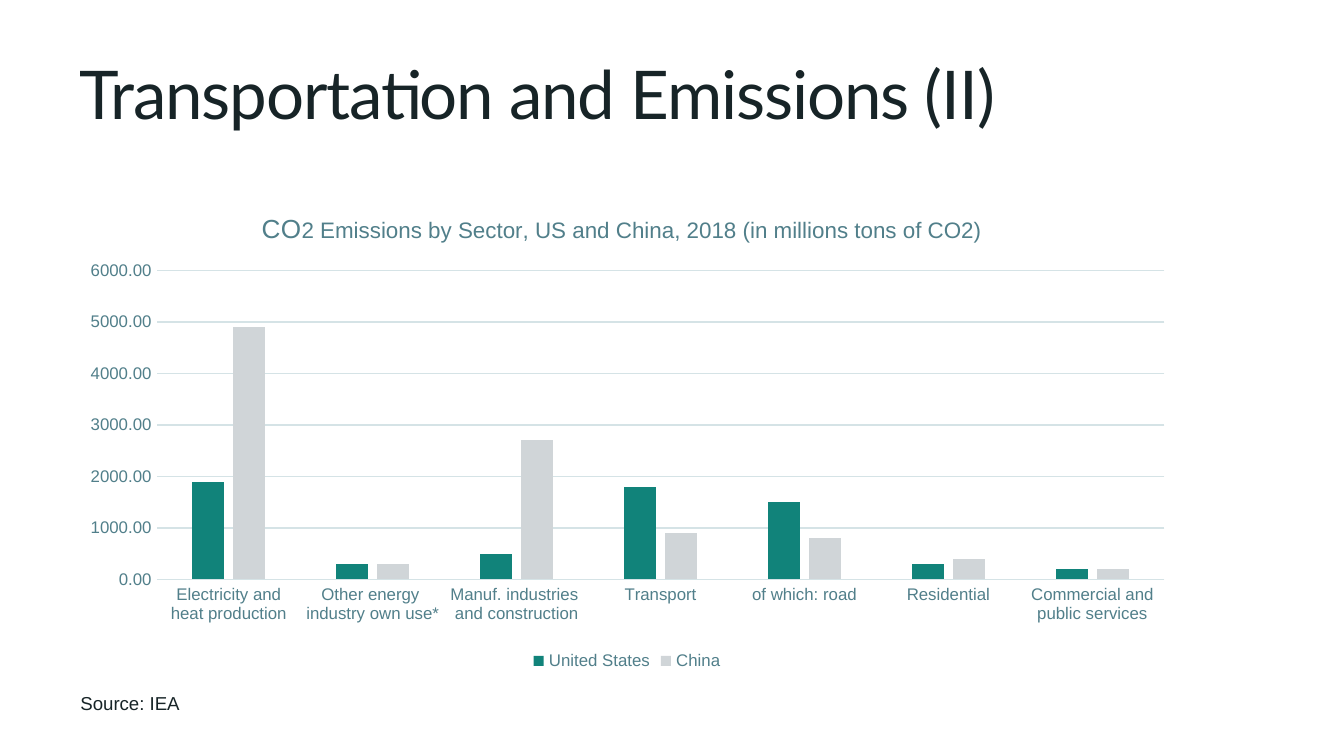
from lxml.etree import SubElement
from pptx import Presentation
from pptx.chart.data import CategoryChartData
from pptx.dml.color import RGBColor
from pptx.enum.chart import XL_CHART_TYPE, XL_LEGEND_POSITION, XL_TICK_MARK
from pptx.enum.text import MSO_ANCHOR, MSO_AUTO_SIZE, PP_ALIGN
from pptx.oxml.ns import qn
from pptx.util import Inches, Pt

INK, SLATE, GRID = "172427", "517F8A", "D5E3E6"


def style_font(font, size, color, name="Arial"):
    font.size = Pt(size)
    font.name = name
    font.bold = False
    font.color.rgb = RGBColor.from_string(color)


def place_chart_part(part, index, **settings):
    """Give a chart part a manual layout, as fractions of the chart."""
    for old in part.findall(qn("c:layout")):
        part.remove(old)
    layout = SubElement(part, qn("c:layout"))
    manual = SubElement(layout, qn("c:manualLayout"))
    for tag, value in settings.items():
        SubElement(manual, qn(f"c:{tag}")).set("val", str(value))
    part.insert(index, layout)


# Widescreen page, 16 by 9
deck = Presentation()
deck.slide_width = Inches(10)
deck.slide_height = deck.slide_width * 9 // 16
page = deck.slides.add_slide(deck.slide_layouts[5])

# Title
title = page.shapes.title
title.left, title.top = Inches(0.49), Inches(0.13)
title.width, title.height = Inches(7.65), Inches(0.91)
title.text_frame.text = "Transportation and Emissions (II)"
title.text_frame.auto_size = MSO_AUTO_SIZE.NONE
title.text_frame.vertical_anchor = MSO_ANCHOR.BOTTOM
para = title.text_frame.paragraphs[0]
para.alignment = PP_ALIGN.LEFT
span = para.runs[0]
style_font(span.font, 36, INK, "Lato")
span.font._element.set("spc", "-60")

# Emissions chart
data = CategoryChartData(number_format="0.00")
data.categories = [
    "Electricity and heat production",
    "Other energy \nindustry own use*",
    "Manuf. industries \nand construction",
    "Transport",
    "of which: road",
    "Residential",
    "Commercial and public services",
]
data.add_series("United States", [1900, 300, 500, 1800, 1500, 300, 200])
data.add_series("China", [4900, 300, 2700, 900, 800, 400, 200])
chart = page.shapes.add_chart(
    XL_CHART_TYPE.COLUMN_CLUSTERED,
    Inches(0.5), Inches(1.44), Inches(8.33), Inches(3.59), data,
).chart
style_font(chart.font, 10, INK)

# Columns
plot = chart.plots[0]
plot.gap_width, plot.overlap = 219, -27
plot.vary_by_categories = False
for series, color in zip(plot.series, ("11837A", "D0D5D8")):
    series.format.fill.solid()
    series.format.fill.fore_color.rgb = RGBColor.from_string(color)
place_chart_part(chart._chartSpace.chart.plotArea, 0, layoutTarget="inner",
                 xMode="edge", yMode="edge", x=0.08, y=0.16, w=0.9, h=0.64)

# Chart title
para = chart.chart_title.text_frame.paragraphs[0]
for text, size in (
    ("CO", 14),
    ("2 Emissions by Sector, US and China, 2018 (in millions tons of CO2)", 12),
):
    span = para.add_run()
    span.text = text
    style_font(span.font, size, SLATE)
place_chart_part(chart.chart_title._element, 1,
                 xMode="edge", yMode="edge", x=0.17, y=0.03)

# Axes and gridlines
categories, values = chart.category_axis, chart.value_axis
for axis in (categories, values):
    axis.major_tick_mark = axis.minor_tick_mark = XL_TICK_MARK.NONE
    style_font(axis.tick_labels.font, 9, SLATE)
values.minimum_scale, values.maximum_scale, values.major_unit = 0, 6000, 1000
values.tick_labels.number_format = "0.00"
values.tick_labels.number_format_is_linked = False
values.format.line.fill.background()
for line in (categories.format.line, values.major_gridlines.format.line):
    line.width = Pt(0.75)
    line.color.rgb = RGBColor.from_string(GRID)

# Legend
chart.has_legend = True
chart.legend.position = XL_LEGEND_POSITION.BOTTOM
chart.legend.include_in_layout = False
style_font(chart.legend.font, 9, SLATE)

# Source note
box = page.shapes.add_textbox(Inches(0.5), Inches(5.1), Inches(0.95), Inches(0.27))
box.text_frame.text = "Source: IEA"
box.text_frame.word_wrap = False
box.text_frame.auto_size = MSO_AUTO_SIZE.SHAPE_TO_FIT_TEXT
style_font(box.text_frame.paragraphs[0].runs[0].font, 10, INK)

deck.save("out.pptx")
